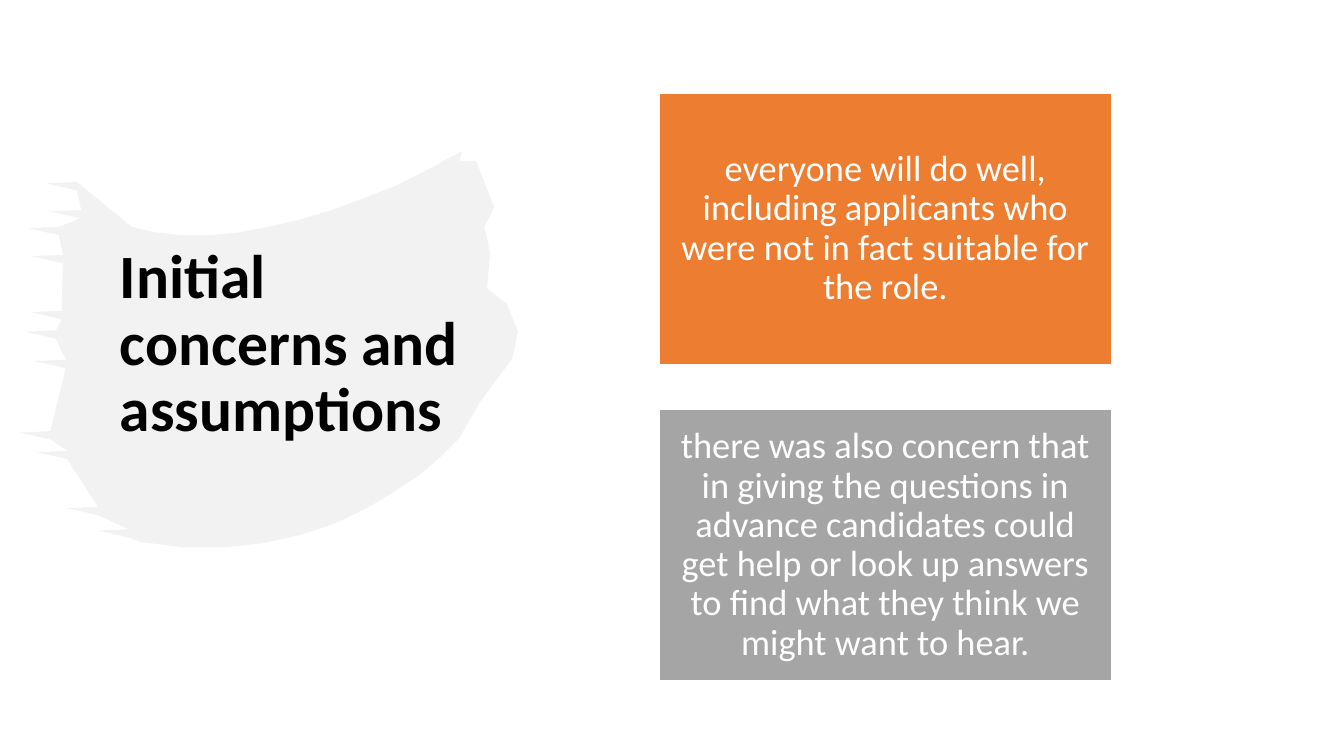
import pptx
import pptx.util
import pptx.dml.color
import pptx.enum.text
import pptx.enum.shapes
import pptx.oxml.ns
import lxml.etree

Pt = pptx.util.Pt
Align = pptx.enum.text.PP_ALIGN

FONT = "Calibri"
TITLE = "Initial concerns and assumptions"
CONCERNS = [
    ("everyone will do well, including applicants who were not in fact suitable for the role.", "ED7D31"),
    ("there was also concern that in giving the questions in advance candidates could get help "
     "or look up answers to find what they think we might want to hear.", "A5A5A5"),
]
CARD_LEFT, CARD_TOP, CARD_WIDTH, CARD_HEIGHT, CARD_GAP = 470.9, 66.4, 323.2, 193.9, 32.2

TOP_CURVE = [(94, 162), (150, 178), (230, 160), (304, 122)]
RIGHT_EDGE = [(330, 108), (328, 115), (340, 115), (353, 148), (346, 162),
              (350, 180), (348, 206), (362, 217), (370, 237), (366, 256), (343, 287)]
BOTTOM_CURVE = [(328, 313), (290, 355), (205, 408), (100, 387)]
BRISTLES = [(70, 379), (48, 363), (26, 323), (14, 309), (25, 258),
            (18, 237), (22, 223), (23, 183), (20, 163), (36, 151), (33, 131)]
NOTCH_WIDTH, NOTCH_RISE = 22, 5


def bezier(points, steps=10):
    start, first, second, end = points
    for step in range(steps + 1):
        t = step / steps
        u = 1 - t
        yield tuple(u**3 * a + 3 * u * u * t * b + 3 * u * t * t * c + t**3 * d
                    for a, b, c, d in zip(start, first, second, end))


def bristle_edge():
    for x, y in BRISTLES:
        yield x + NOTCH_WIDTH, y + NOTCH_RISE
        yield x, y
        yield x + NOTCH_WIDTH, y - NOTCH_RISE / 5


def color(value):
    return pptx.dml.color.RGBColor.from_string(value)


def paint(shape, fill, line=None):
    shape.shadow.inherit = False
    shape.fill.solid()
    shape.fill.fore_color.rgb = color(fill)
    if line:
        shape.line.color.rgb = color(line)
        shape.line.width = Pt(1)
    else:
        shape.line.fill.background()


def write(shape, text, size, ink, bold=False, align=Align.LEFT, insets=(7.2, 3.6, 7.2, 3.6)):
    frame = shape.text_frame
    frame.auto_size = pptx.enum.text.MSO_AUTO_SIZE.NONE
    frame.word_wrap = True
    frame.vertical_anchor = pptx.enum.text.MSO_ANCHOR.MIDDLE
    frame.margin_left, frame.margin_top, frame.margin_right, frame.margin_bottom = map(Pt, insets)
    para = frame.paragraphs[0]
    para.alignment = align
    para.line_spacing = 0.9
    span = para.add_run()
    span.text = text
    span.font.name = FONT
    span.font.size = Pt(size)
    span.font.bold = bold
    span.font.color.rgb = color(ink)


deck = pptx.Presentation()
deck.slide_width, deck.slide_height = Pt(960), Pt(540)
page = deck.slides.add_slide(deck.slide_layouts[5])
title = page.shapes.title

outline = [*bezier(TOP_CURVE), *RIGHT_EDGE, *bezier(BOTTOM_CURVE), *bristle_edge()]
builder = page.shapes.build_freeform(*outline[0], scale=Pt(1))
builder.add_line_segments(outline[1:], close=True)
brush = builder.convert_to_shape()
paint(brush, "E7E6E6")
tint = brush._element.spPr.find(".//" + pptx.oxml.ns.qn("a:srgbClr"))
lxml.etree.SubElement(tint, pptx.oxml.ns.qn("a:alpha"), val="50000")
title._element.addprevious(brush._element)

title.left, title.top, title.width, title.height = Pt(78.5), Pt(54), Pt(275), Pt(432.7)
write(title, TITLE, 44, "000000", bold=True, insets=(7.2, 3.6, 7.2, 51))

for index, (concern, fill) in enumerate(CONCERNS):
    top = CARD_TOP + index * (CARD_HEIGHT + CARD_GAP)
    card = page.shapes.add_shape(pptx.enum.shapes.MSO_SHAPE.RECTANGLE,
                                 Pt(CARD_LEFT), Pt(top), Pt(CARD_WIDTH), Pt(CARD_HEIGHT))
    paint(card, fill, line="FFFFFF")
    write(card, concern, 26, "FFFFFF", align=Align.CENTER, insets=(7.8,) * 4)

deck.save("out.pptx")
